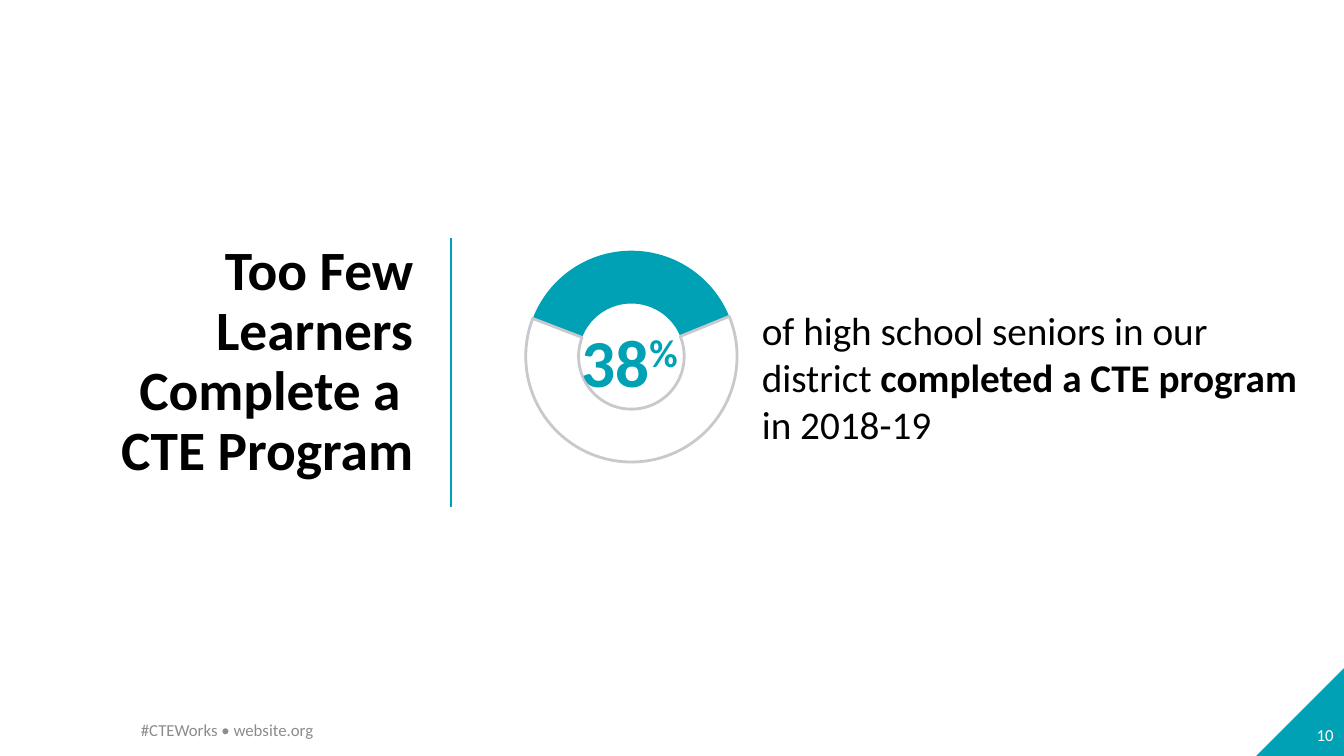
"""Build the slide on the share of seniors who completed a CTE program."""
import pptx
import pptx.chart.data
import pptx.dml.color
import pptx.enum.chart
import pptx.enum.shapes
import pptx.enum.text
import pptx.util
from lxml import etree
from pptx.oxml.ns import qn

Pt = pptx.util.Pt
Align = pptx.enum.text.PP_ALIGN
Anchor = pptx.enum.text.MSO_ANCHOR

TEAL, BLACK, WHITE, GREY, RING = "00A1B4", "000000", "FFFFFF", "8C8C8C", "C8C9CC"
FONT = "Calibri"
WIDTH, HEIGHT = 960, 540
CORNER = 62.6
TOP = 170

TITLE = [("Too Few Learners Complete a \vCTE Program", {"bold": True})]
SHARES = {"1": 38, "2": 62}
CHART_BOX = (343.4, TOP, 215.3, 169.2)
RING_SIZE = 151
TEXTS = [
    ((743.8, 510.5, 216, 28.8), [("10", {})],
     {"size": 12, "color": WHITE, "align": Align.RIGHT, "anchor": Anchor.MIDDLE}),
    ((537.1, 215.3, 408.2, 108.7),
     [("of high school seniors in our district ", {}),
      ("completed a CTE program ", {"bold": True}),
      ("in 2018-19", {})],
     {"size": 28}),
    ((408.2, 225.4, 117.4, 65.5),
     [("38", {"bold": True}), ("%", {"bold": True, "raised": 30})],
     {"size": 48, "color": TEAL}),
    ((93.6, 506.9, 324, 28.8), [("#CTEWorks • website.org", {})],
     {"size": 12, "color": GREY, "anchor": Anchor.MIDDLE}),
]


def rgb(value):
    return pptx.dml.color.RGBColor.from_string(value)


def place(shape, box):
    shape.left, shape.top, shape.width, shape.height = map(Pt, box)


def write(shape, runs, size=12, color=BLACK, align=Align.LEFT,
          anchor=Anchor.TOP, spacing=None):
    frame = shape.text_frame
    frame.word_wrap = True
    frame.auto_size = pptx.enum.text.MSO_AUTO_SIZE.NONE
    frame.vertical_anchor = anchor
    frame.margin_left = frame.margin_right = Pt(7.2)
    frame.margin_top = frame.margin_bottom = Pt(3.6)
    para = frame.paragraphs[0]
    para.alignment = align
    if spacing:
        para.line_spacing = spacing
    for index, (text, style) in enumerate(runs):
        pieces = text.split("\v")
        for number, piece in enumerate(pieces):
            if number:
                para.add_line_break()
            span = para.add_run()
            span.text = piece
            span.font.name = FONT
            span.font.size = Pt(size)
            span.font.bold = style.get("bold", False)
            span.font.color.rgb = rgb(color)
            if "raised" in style:
                span.font._element.set("baseline", str(style["raised"] * 1000))


def add_corner(page):
    corner = page.shapes.add_shape(
        pptx.enum.shapes.MSO_SHAPE.RIGHT_TRIANGLE,
        Pt(WIDTH - CORNER), Pt(HEIGHT - CORNER), Pt(CORNER), Pt(CORNER))
    corner.shadow.inherit = False
    corner.fill.solid()
    corner.fill.fore_color.rgb = rgb(TEAL)
    corner.line.fill.background()
    corner._element.spPr.find(qn("a:xfrm")).set("flipH", "1")


def add_divider(page):
    divider = page.shapes.add_connector(
        pptx.enum.shapes.MSO_CONNECTOR.STRAIGHT,
        Pt(322), Pt(TOP), Pt(322), Pt(362))
    divider.line.color.rgb = rgb(TEAL)
    divider.line.width = Pt(1.5)
    etree.SubElement(divider._element.spPr, qn("a:effectLst"))


def add_ring(page):
    data = pptx.chart.data.CategoryChartData()
    data.categories = list(SHARES)
    data.add_series("Series 1", list(SHARES.values()))
    chart = page.shapes.add_chart(
        pptx.enum.chart.XL_CHART_TYPE.DOUGHNUT, *map(Pt, CHART_BOX), data).chart
    chart.has_legend = False
    chart.has_title = False
    chart.font.name = FONT
    chart.font.size = Pt(10)
    chart.font.color.rgb = rgb(BLACK)
    plot = chart.plots[0]
    plot.vary_by_categories = False
    done, rest = [plot.series[0].points[i].format for i in range(len(SHARES))]
    done.fill.solid()
    done.fill.fore_color.rgb = rgb(TEAL)
    done.line.fill.background()
    rest.fill.background()
    rest.line.color.rgb = rgb(RING)
    rest.line.width = Pt(2)

    ring = plot._element
    for tag, value in (("c:firstSliceAng", 291), ("c:holeSize", 58)):
        node = ring.find(qn(tag))
        if node is None:
            node = etree.SubElement(ring, qn(tag))
        node.set("val", str(value))

    area = ring.getparent()
    layout = area.find(qn("c:layout"))
    if layout is None:
        layout = etree.Element(qn("c:layout"))
        area.insert(0, layout)
    manual = etree.SubElement(layout, qn("c:manualLayout"))
    wide, high = RING_SIZE / CHART_BOX[2], RING_SIZE / CHART_BOX[3]
    for tag, value in (("layoutTarget", "inner"), ("xMode", "edge"), ("yMode", "edge"),
                       ("x", (1 - wide) / 2), ("y", (1 - high) / 2),
                       ("w", wide), ("h", high)):
        etree.SubElement(manual, qn("c:" + tag)).set("val", str(value))


def main():
    deck = pptx.Presentation()
    deck.slide_width, deck.slide_height = Pt(WIDTH), Pt(HEIGHT)
    page = deck.slides.add_slide(deck.slide_layouts[5])
    add_corner(page)
    title = page.shapes.title
    place(title, (14.4, TOP, 288, 147.6))
    write(title, TITLE, size=39.6, align=Align.RIGHT, spacing=0.9)
    add_divider(page)
    add_ring(page)
    for box, runs, style in TEXTS:
        write(page.shapes.add_textbox(*map(Pt, box)), runs, **style)
    deck.save("out.pptx")


if __name__ == "__main__":
    main()
